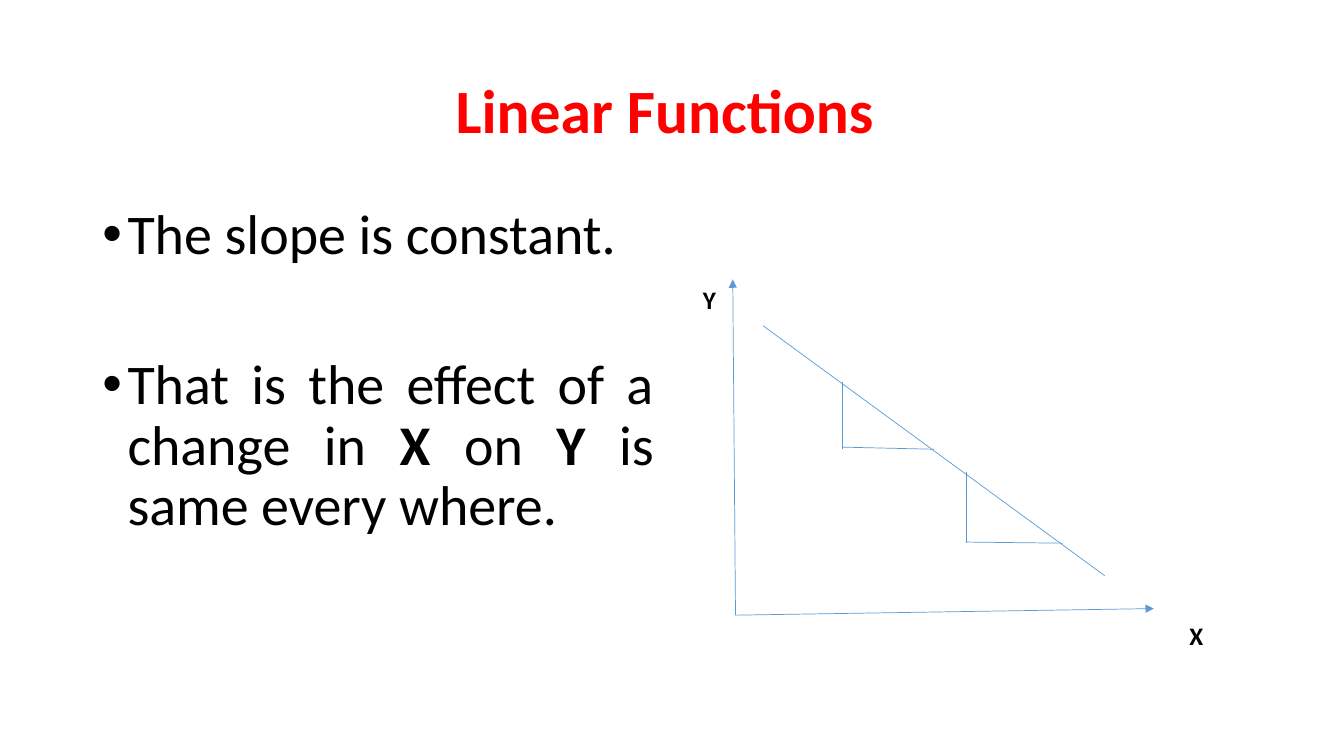
from lxml.etree import SubElement
from pptx import Presentation
from pptx.dml.color import RGBColor
from pptx.enum.shapes import MSO_CONNECTOR
from pptx.enum.text import MSO_ANCHOR, PP_ALIGN
from pptx.oxml.ns import qn
from pptx.util import Pt

COLORS = {"title": "FF0000", "text": "000000", "line": "5B9BD5"}
FONT = "Calibri"


def add_text(s, box, wrap=True, anchor=MSO_ANCHOR.TOP):
    tf = s.shapes.add_textbox(*map(Pt, box)).text_frame
    tf.word_wrap = wrap
    tf.vertical_anchor = anchor
    return tf


def format_paragraph(p, **values):
    for name, value in values.items():
        setattr(p, name, value)


def add_run(p, text, size, bold=False, color="text"):
    r = p.add_run()
    r.text = text
    values = {"name": FONT, "size": Pt(size), "bold": bold}
    for name, value in values.items():
        setattr(r.font, name, value)
    r.font.color.rgb = RGBColor.from_string(COLORS[color])


def add_bullet(p, indent):
    pPr = p._p.get_or_add_pPr()
    pPr.set("marL", str(Pt(indent)))
    pPr.set("indent", str(-Pt(indent)))
    SubElement(pPr, qn("a:buFont"), typeface="Arial")
    SubElement(pPr, qn("a:buChar"), char="•")


def add_line(s, start, end, arrow=False):
    c = s.shapes.add_connector(MSO_CONNECTOR.STRAIGHT, *map(Pt, start + end))
    c.line.width = Pt(0.5)
    c.line.color.rgb = RGBColor.from_string(COLORS["line"])
    if arrow:
        SubElement(c.line._get_or_add_ln(), qn("a:tailEnd"), type="triangle")
    SubElement(c._element.spPr, qn("a:effectLst"))


def add_axis_label(s, text, left, top):
    tf = add_text(s, (left, top, 24, 29), wrap=False)
    add_run(tf.paragraphs[0], text, 18, bold=True)


def main():
    prs = Presentation()
    prs.slide_width, prs.slide_height = Pt(960), Pt(540)
    s = prs.slides.add_slide(prs.slide_layouts[6])

    # Title
    tf = add_text(s, (66, 28.8, 828, 104.4), anchor=MSO_ANCHOR.MIDDLE)
    p = tf.paragraphs[0]
    format_paragraph(p, alignment=PP_ALIGN.CENTER, line_spacing=0.9)
    add_run(p, "Linear Functions ", 44, bold=True, color="title")

    # Bullets: alignment, space before, runs as (text, bold)
    bullets = [
        (PP_ALIGN.LEFT, 10, [("The slope is constant.", False)]),
        (PP_ALIGN.JUSTIFY, 64, [
            ("That is the effect of a change in ", False), ("X ", True),
            ("on ", False), ("Y ", True), ("is same every where. ", False)]),
    ]
    tf = add_text(s, (66, 143.75, 408, 342.6))
    for i, (alignment, gap, runs) in enumerate(bullets):
        p = tf.add_paragraph() if i else tf.paragraphs[0]
        format_paragraph(p, alignment=alignment, line_spacing=0.9,
                         space_before=Pt(gap))
        add_bullet(p, 18)
        for text, bold in runs:
            add_run(p, text, 40, bold)

    # Axes
    origin = (525.4, 439.4)
    for tip in [(523.4, 199.6), (824.2, 434.7)]:
        add_line(s, origin, tip, arrow=True)

    # Linear function
    add_line(s, (545.2, 232.8), (789.1, 411.2))

    # Slope steps: x, top, bottom of the rise; start and end of the run
    for x, top, bottom, run_y, end in [
            (601.5, 272.8, 320.8, 319.4, (667.2, 320.9)),
            (690, 337.4, 388, 387.2, (759, 388))]:
        add_line(s, (x, top), (x, bottom))
        add_line(s, (x, run_y), end)

    # Axis labels
    add_axis_label(s, "Y", 495, 199.5)
    add_axis_label(s, "X", 842.5, 439.4)

    prs.save("out.pptx")


if __name__ == "__main__":
    main()
